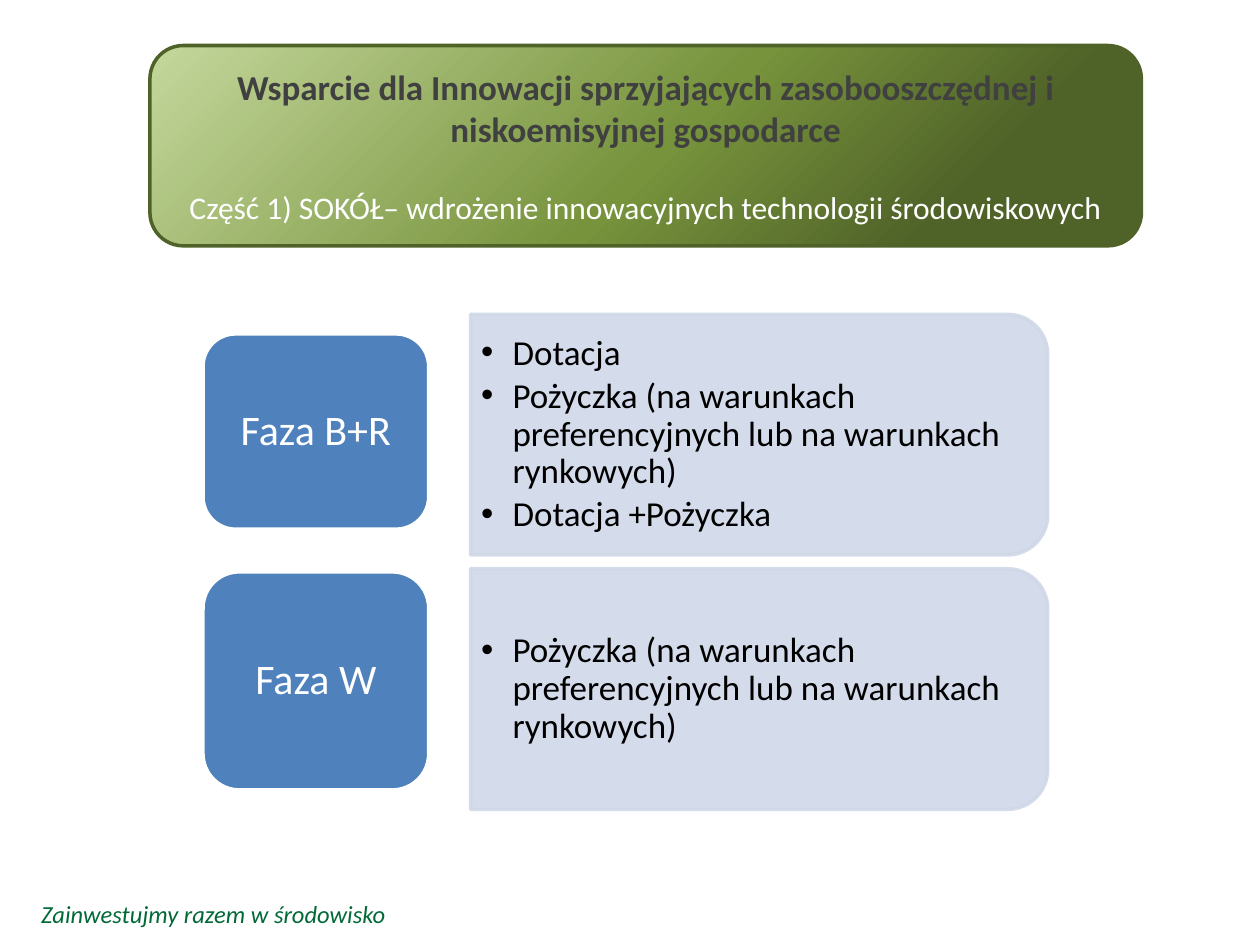
from lxml import etree
from pptx import Presentation
from pptx.dml.color import RGBColor
from pptx.enum import shapes, text
from pptx.oxml import parse_xml
from pptx.oxml.ns import nsdecls, qn
from pptx.util import Pt

WHITE = RGBColor(0xFF, 0xFF, 0xFF)
BLACK = RGBColor(0, 0, 0)
CHARCOAL = RGBColor(0x40, 0x40, 0x40)
FOREST = RGBColor(0x02, 0x69, 0x37)
DARK_OLIVE = RGBColor(0x4F, 0x62, 0x28)
OLIVE = RGBColor(0x77, 0x93, 0x3C)
LIGHT_OLIVE = RGBColor(0xC3, 0xD6, 0x9B)
BLUE = RGBColor(0x4F, 0x81, 0xBD)
PALE_BLUE = RGBColor(0xD0, 0xD8, 0xE8)

LOAN = "Pożyczka (na warunkach preferencyjnych lub na warunkach rynkowych)"
PHASES = [
    ("Faza B+R", ["Dotacja", LOAN, "Dotacja +Pożyczka"], 11.2, 111.6),
    ("Faza W", [LOAN], 1.8, 124.6),
]


def style(paragraph, size, color, bold=False, italic=False):
    """Set the font of a whole paragraph."""
    font = paragraph.font
    font.name, font.size = "Calibri", Pt(size)
    font.bold, font.italic = bold, italic
    font.color.rgb = color


def add_box(slide, preset, left, top, width, height, fill, line):
    """Add an outlined preset shape without shadow."""
    box = slide.shapes.add_shape(preset, Pt(left), Pt(top), Pt(width), Pt(height))
    box.shadow.inherit = False
    box.fill.solid()
    box.fill.fore_color.rgb = fill
    box.line.color.rgb = line
    box.line.width = Pt(2)
    return box


def add_header(slide, left, top, width, height):
    """Place the gradient banner with title and subtitle."""
    banner = add_box(slide, shapes.MSO_SHAPE.ROUNDED_RECTANGLE,
                     left, top, width, height, OLIVE, DARK_OLIVE)
    stops = "".join(
        f'<a:gs pos="{percent * 1000}"><a:srgbClr val="{color}"/></a:gs>'
        for percent, color in ((19, DARK_OLIVE), (48, OLIVE), (99, LIGHT_OLIVE)))
    gradient = parse_xml(
        f'<a:gradFill {nsdecls("a")} rotWithShape="1"><a:gsLst>{stops}</a:gsLst>'
        '<a:lin ang="13500000" scaled="0"/></a:gradFill>')
    properties = banner._element.spPr
    properties.replace(properties.find(qn("a:solidFill")), gradient)

    frame = banner.text_frame
    frame.word_wrap = True
    frame.vertical_anchor = text.MSO_ANCHOR.MIDDLE
    title, subtitle = frame.paragraphs[0], frame.add_paragraph()
    title.text = ("Wsparcie dla Innowacji sprzyjających zasobooszczędnej "
                  "i niskoemisyjnej gospodarce")
    subtitle.text = "Część 1) SOKÓŁ– wdrożenie innowacyjnych technologii środowiskowych"
    title.alignment = subtitle.alignment = text.PP_ALIGN.CENTER
    subtitle.space_before = Pt(22)
    style(title, 20, CHARCOAL, bold=True)
    style(subtitle, 18, WHITE)


def add_support(slide, left, top, width, height, forms):
    """Place a pale panel, rounded on the right, with its bulleted forms of support."""
    panel = add_box(slide, shapes.MSO_SHAPE.ROUND_2_SAME_RECTANGLE,
                    left + (width - height) / 2, top + (height - width) / 2,
                    height, width, PALE_BLUE, PALE_BLUE)
    panel.rotation = 90
    for color in panel._element.spPr.iter(qn("a:srgbClr")):
        etree.SubElement(color, qn("a:alpha"), val="90000")

    frame = slide.shapes.add_textbox(Pt(left), Pt(top + 6.8), Pt(width - 7),
                                     Pt(height - 13.6)).text_frame
    frame.word_wrap = True
    frame.vertical_anchor = text.MSO_ANCHOR.MIDDLE
    frame.margin_left = frame.margin_right = Pt(6)
    frame.margin_top = frame.margin_bottom = Pt(3)
    for index, form in enumerate(forms):
        item = frame.add_paragraph() if index else frame.paragraphs[0]
        item.text = form
        item.line_spacing = 0.9
        item.space_after = Pt(3)
        properties = item._p.get_or_add_pPr()
        properties.set("marL", str(Pt(18)))
        properties.set("indent", str(-Pt(18)))
        etree.SubElement(properties, qn("a:buFont"), typeface="Arial")
        etree.SubElement(properties, qn("a:buChar"), char="•")
        style(item, 20, BLACK)


def add_phase(slide, left, top, width, height, name):
    """Place the blue box that names a phase."""
    box = add_box(slide, shapes.MSO_SHAPE.ROUNDED_RECTANGLE,
                  left, top, width, height, BLUE, WHITE)
    frame = box.text_frame
    frame.word_wrap = True
    frame.vertical_anchor = text.MSO_ANCHOR.MIDDLE
    label = frame.paragraphs[0]
    label.text = name
    label.alignment = text.PP_ALIGN.CENTER
    label.line_spacing = 0.9
    style(label, 24, WHITE)


def add_phases(slide, left, top, row_height, pitch):
    """Stack one row per phase: name on the left, support on the right."""
    for row, (name, forms, offset, name_height) in enumerate(PHASES):
        row_top = top + row * pitch
        add_support(slide, left + 152.9, row_top, 329.8, row_height, forms)
        add_phase(slide, left, row_top + offset, 129, name_height, name)


def add_motto(slide, left, top, width, height):
    """Place the motto at the foot of the slide."""
    frame = slide.shapes.add_textbox(Pt(left), Pt(top), Pt(width), Pt(height)).text_frame
    frame.word_wrap = True
    motto = frame.paragraphs[0]
    motto.text = "Zainwestujmy razem w środowisko"
    style(motto, 14, FOREST, italic=True)


def main():
    """Build and save the slide."""
    deck = Presentation()
    deck.slide_width, deck.slide_height = Pt(720), Pt(540)
    slide = deck.slides.add_slide(deck.slide_layouts[6])
    add_motto(slide, 16.5, 510, 304, 24.5)
    add_phases(slide, 116, 179.6, 137.5, 145.4)
    add_header(slide, 85.7, 26, 566.6, 114.5)
    deck.save("out.pptx")


if __name__ == "__main__":
    main()
